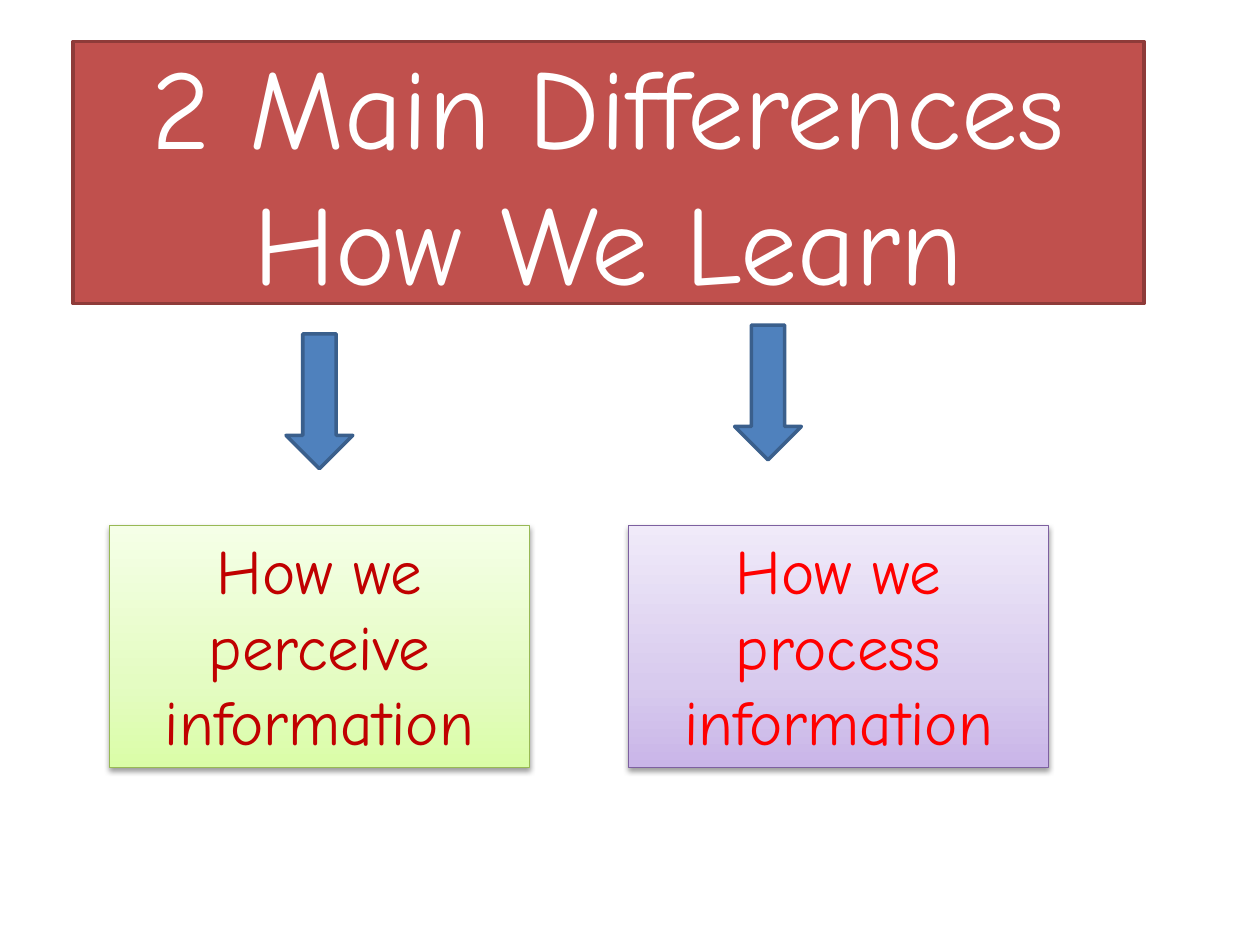
from dataclasses import dataclass

import lxml.etree
import pptx
import pptx.dml.color
import pptx.enum.shapes
import pptx.enum.text
import pptx.oxml.ns
import pptx.util
from pptx.dml.color import RGBColor
from pptx.util import Inches, Pt

FONT = "Comic Neue"
WHITE = RGBColor(0xFF, 0xFF, 0xFF)
BRICK = RGBColor(0xC0, 0x50, 0x4D)
DARK_BRICK = RGBColor(0x8E, 0x3B, 0x39)
BLUE = RGBColor(0x4F, 0x81, 0xBD)
DARK_BLUE = RGBColor(0x3A, 0x5F, 0x8C)
GREEN = RGBColor(0x98, 0xB9, 0x55)
PURPLE = RGBColor(0x7D, 0x60, 0xA0)
DARK_RED = RGBColor(0xC0, 0x00, 0x00)
RED = RGBColor(0xFF, 0x00, 0x00)
BLACK = RGBColor(0x00, 0x00, 0x00)
GREEN_STOPS = (RGBColor(0xDA, 0xFD, 0xA7), RGBColor(0xE4, 0xFC, 0xC2), RGBColor(0xF5, 0xFF, 0xE7))
PURPLE_STOPS = (RGBColor(0xC9, 0xB5, 0xE8), RGBColor(0xD8, 0xCB, 0xEE), RGBColor(0xF0, 0xEA, 0xF9))
STOP_POSITIONS = (0, 35000, 100000)

BOX_TOP, BOX_WIDTH, BOX_HEIGHT = 4.17, 3.33, 1.92
ARROW_LENGTH, ARROW_THICKNESS = 1.07, 0.53


@dataclass
class Difference:
    text: str
    left: float
    stops: tuple[RGBColor, ...]
    line_color: RGBColor
    text_color: RGBColor
    arrow_left: float
    arrow_top: float


DIFFERENCES = [
    Difference("How we perceive information", 0.87, GREEN_STOPS, GREEN, DARK_RED, 2, 2.92),
    Difference("How we process information", 4.99, PURPLE_STOPS, PURPLE, RED, 5.56, 2.85),
]


def place(shape, left: float, top: float, width: float, height: float) -> None:
    bounds = {"left": left, "top": top, "width": width, "height": height}
    for name, value in bounds.items():
        setattr(shape, name, Inches(value))


def set_line(shape, color: RGBColor, width: float) -> None:
    shape.line.color.rgb = color
    shape.line.width = Pt(width)


def set_text(shape, text: str, size: float, color: RGBColor, anchor) -> None:
    frame = shape.text_frame
    frame.text = text
    frame_format = {
        "word_wrap": True,
        "auto_size": pptx.enum.text.MSO_AUTO_SIZE.NONE,
        "vertical_anchor": anchor,
    }
    for name, value in frame_format.items():
        setattr(frame, name, value)
    paragraph = frame.paragraphs[0]
    paragraph.alignment = pptx.enum.text.PP_ALIGN.CENTER
    font = paragraph.runs[0].font
    for name, value in {"name": FONT, "size": Pt(size)}.items():
        setattr(font, name, value)
    font.color.rgb = color


def add_child(parent, tag: str, **attributes: str):
    return lxml.etree.SubElement(parent, pptx.oxml.ns.qn(tag), attributes)


def set_gradient(shape, colors: tuple[RGBColor, ...]) -> None:
    """Fill with a gradient that runs from the bottom edge to the top."""
    shape.fill.gradient()
    shape.fill.gradient_angle = 90
    stop_list = next(shape.element.spPr.iter(pptx.oxml.ns.qn("a:gsLst")))
    for stop in list(stop_list):
        stop_list.remove(stop)
    for position, color in zip(STOP_POSITIONS, colors):
        stop = add_child(stop_list, "a:gs", pos=str(position))
        add_child(stop, "a:srgbClr", val=str(color))


def set_shadow(shape) -> None:
    shape.shadow.inherit = False
    effects = shape.element.spPr.find(pptx.oxml.ns.qn("a:effectLst"))
    shadow = add_child(effects, "a:outerShdw", blurRad="40000", dist="20000",
                       dir="5400000", rotWithShape="0")
    color = add_child(shadow, "a:srgbClr", val=str(BLACK))
    add_child(color, "a:alpha", val="38000")


def format_box(shape, difference: Difference) -> None:
    place(shape, difference.left, BOX_TOP, BOX_WIDTH, BOX_HEIGHT)
    set_gradient(shape, difference.stops)
    set_line(shape, difference.line_color, 0.75)
    set_shadow(shape)
    set_text(shape, difference.text, 36, difference.text_color,
             pptx.enum.text.MSO_ANCHOR.TOP)
    shape.text_frame.paragraphs[0].space_before = Pt(7.2)


def add_arrow(slide, difference: Difference) -> None:
    arrow = slide.shapes.add_shape(
        pptx.enum.shapes.MSO_SHAPE.RIGHT_ARROW,
        Inches(difference.arrow_left), Inches(difference.arrow_top),
        Inches(ARROW_LENGTH), Inches(ARROW_THICKNESS))
    arrow.rotation = 90
    arrow.shadow.inherit = False
    arrow.fill.solid()
    arrow.fill.fore_color.rgb = BLUE
    set_line(arrow, DARK_BLUE, 2)


def main() -> None:
    presentation = pptx.Presentation()
    presentation.slide_width = Inches(10)
    presentation.slide_height = Inches(7.5)
    slide = presentation.slides.add_slide(presentation.slide_layouts[0])

    title = slide.shapes.title
    place(title, 0.58, 0.33, 8.5, 2.08)
    title.fill.solid()
    title.fill.fore_color.rgb = BRICK
    set_line(title, DARK_BRICK, 2)
    set_text(title, "2 Main Differences How We Learn", 64.8, WHITE,
             pptx.enum.text.MSO_ANCHOR.MIDDLE)

    perceive, process = DIFFERENCES
    format_box(slide.placeholders[1], perceive)
    for difference in DIFFERENCES:
        add_arrow(slide, difference)
    process_box = slide.shapes.add_shape(
        pptx.enum.shapes.MSO_SHAPE.RECTANGLE, 0, 0, 0, 0)
    format_box(process_box, process)

    presentation.save("out.pptx")


if __name__ == "__main__":
    main()
